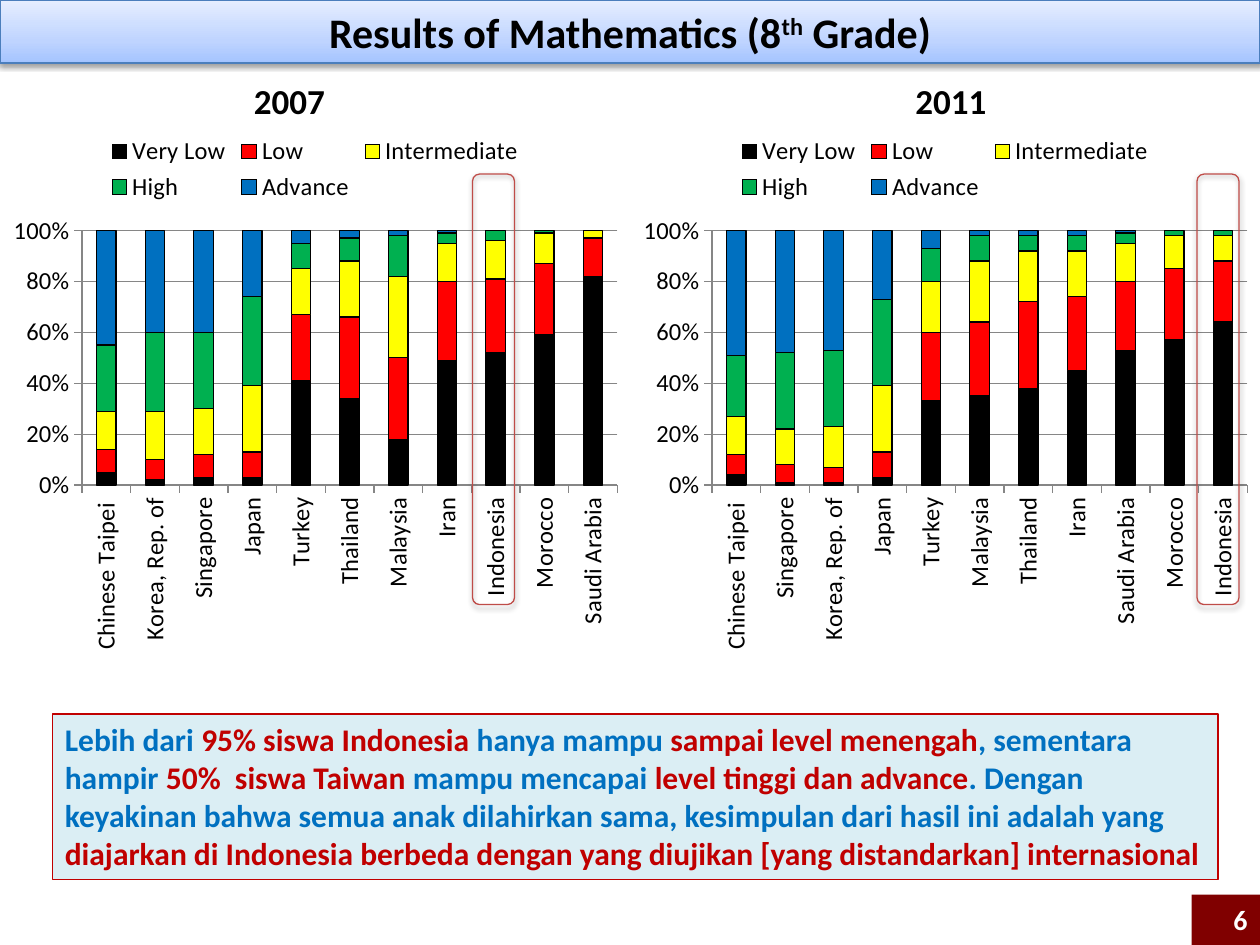
from lxml import etree
from pptx import Presentation
from pptx.chart.data import CategoryChartData
from pptx.dml.color import RGBColor
from pptx.enum.chart import XL_CHART_TYPE as CHART, XL_LEGEND_POSITION as LEGEND, XL_TICK_MARK as TICK
from pptx.enum.shapes import MSO_SHAPE as SHAPE
from pptx.enum.text import MSO_ANCHOR as ANCHOR, PP_ALIGN as ALIGN
from pptx.oxml import parse_xml
from pptx.util import Pt

FONT = "Calibri"
NS = 'xmlns:a="http://schemas.openxmlformats.org/drawingml/2006/main"'
CHART_NS = 'xmlns:c="http://schemas.openxmlformats.org/drawingml/2006/chart"'
COLORS = {
    "black": "000000", "white": "FFFFFF", "grid": "868686",
    "title_line": "4B7EBC", "marker": "BF4C48", "note_fill": "DBEEF4",
    "blue": "0070C0", "red": "C00000", "badge": "800000",
}
TITLE_STOPS = [(0, "A4C4FF"), (35, "BFD4FF"), (100, "E6EEFF")]
LEVELS = {
    "Very Low": "000000", "Low": "FF0000", "Intermediate": "FFFF00",
    "High": "00B050", "Advance": "0070C0",
}
RESULTS_2007 = {
    "Chinese Taipei ": (5, 9, 15, 26, 45),
    "Korea, Rep. of": (2, 8, 19, 31, 40),
    "Singapore": (3, 9, 18, 30, 40),
    "Japan": (3, 10, 26, 35, 26),
    "Turkey": (41, 26, 18, 10, 5),
    "Thailand": (34, 32, 22, 9, 3),
    "Malaysia": (18, 32, 32, 16, 2),
    "Iran": (49, 31, 15, 4, 1),
    "Indonesia": (52, 29, 15, 4, 0),
    "Morocco": (59, 28, 12, 1, 0),
    "Saudi Arabia": (82, 15, 3, 0, 0),
}
RESULTS_2011 = {
    "Chinese Taipei ": (4, 8, 15, 24, 49),
    "Singapore": (1, 7, 14, 30, 48),
    "Korea, Rep. of": (1, 6, 16, 30, 47),
    "Japan": (3, 10, 26, 34, 27),
    "Turkey": (33, 27, 20, 13, 7),
    "Malaysia": (35, 29, 24, 10, 2),
    "Thailand": (38, 34, 20, 6, 2),
    "Iran": (45, 29, 18, 6, 2),
    "Saudi Arabia": (53, 27, 15, 4, 1),
    "Morocco": (57, 28, 13, 2, 0),
    "Indonesia": (64, 24, 10, 2, 0),
}
NOTE = [
    ("Lebih dari ", "blue"), ("95% siswa Indonesia ", "red"),
    ("hanya mampu ", "blue"), ("sampai level menengah", "red"),
    (", sementara hampir ", "blue"), ("50%  siswa Taiwan", "red"),
    (" mampu mencapai ", "blue"), ("level tinggi dan advance", "red"),
    (". Dengan keyakinan bahwa semua anak dilahirkan sama, "
     "kesimpulan dari hasil ini adalah yang ", "blue"),
    ("diajarkan di Indonesia berbeda dengan yang diujikan "
     "[yang distandarkan] internasional", "red"),
]


def rgb(name):
    return RGBColor.from_string(COLORS[name])


def set_font(font, size, color="black", bold=True):
    font.name, font.size, font.bold = FONT, Pt(size), bold
    font.color.rgb = rgb(color)


def set_line(line, color):
    line.color.rgb = rgb(color)
    line.width = Pt(0.75)


def add_box(slide, kind, box, fill=None, line=None):
    sp = slide.shapes.add_shape(kind, *map(Pt, box))
    sp.shadow.inherit = False
    if fill:
        sp.fill.solid()
        sp.fill.fore_color.rgb = rgb(fill)
    else:
        sp.fill.background()
    if line:
        set_line(sp.line, line)
    else:
        sp.line.fill.background()
    return sp


def cast_shadow(sp):
    effects = sp.element.spPr.find("{*}effectLst")
    effects.append(parse_xml(
        f'<a:outerShdw {NS} blurRad="{Pt(3.1)}" dist="{Pt(1.6)}" dir="5400000" rotWithShape="0">'
        f'<a:srgbClr val="{COLORS["black"]}"><a:alpha val="38000"/></a:srgbClr></a:outerShdw>'))


def fill_gradient(sp, stops):
    sp.fill.gradient()
    grad = sp.element.spPr.find("{*}gradFill")
    stop_xml = "".join(
        f'<a:gs pos="{pos * 1000}"><a:srgbClr val="{color}"/></a:gs>' for pos, color in stops)
    new_grad = parse_xml(
        f'<a:gradFill {NS} rotWithShape="1"><a:gsLst>{stop_xml}</a:gsLst>'
        '<a:lin ang="16200000" scaled="0"/></a:gradFill>')
    grad.getparent().replace(grad, new_grad)


def write(sp, runs, size, align=ALIGN.LEFT, anchor=ANCHOR.TOP, wrap=True):
    tf = sp.text_frame
    tf.word_wrap, tf.vertical_anchor = wrap, anchor
    p = tf.paragraphs[0]
    p.alignment = align
    set_font(p.font, size)
    for text, color in runs:
        r = p.add_run()
        r.text = text
        set_font(r.font, size, color)
    return p


def add_title(slide):
    sp = add_box(slide, SHAPE.RECTANGLE, (0, 0, 720, 36), line="title_line")
    fill_gradient(sp, TITLE_STOPS)
    cast_shadow(sp)
    runs = [(text, "black") for text in ("Results of Mathematics (8", "th", " Grade)")]
    p = write(sp, runs, 24, ALIGN.CENTER)
    p.runs[1].font._element.set("baseline", "30000")


def place_plot(chart, x, y, w, h):
    plot_area = chart._chartSpace.chart.plotArea
    for old in plot_area.findall("{*}layout"):
        plot_area.remove(old)
    plot_area.insert(0, etree.fromstring(
        f'<c:layout {CHART_NS}><c:manualLayout><c:layoutTarget val="inner"/>'
        '<c:xMode val="edge"/><c:yMode val="edge"/>'
        f'<c:x val="{x}"/><c:y val="{y}"/><c:w val="{w}"/><c:h val="{h}"/>'
        '</c:manualLayout></c:layout>'))


def add_results_chart(slide, left, results):
    data = CategoryChartData()
    data.categories = list(results)
    for name, values in zip(LEVELS, zip(*results.values())):
        data.add_series(name, values)
    chart = slide.shapes.add_chart(
        CHART.COLUMN_STACKED_100, Pt(left), Pt(69.84), Pt(360), Pt(309.6), data).chart
    set_font(chart.font, 14, bold=False)
    chart.has_title = False
    chart.has_legend = True
    chart.legend.position = LEGEND.TOP
    chart.legend.include_in_layout = False
    plot = chart.plots[0]
    plot.gap_width, plot.overlap, plot.vary_by_categories = 150, 100, False
    for series, color in zip(plot.series, LEVELS.values()):
        series.format.fill.solid()
        series.format.fill.fore_color.rgb = RGBColor.from_string(color)
        set_line(series.format.line, "black")
    for axis in (chart.category_axis, chart.value_axis):
        axis.major_tick_mark = TICK.OUTSIDE
        set_line(axis.format.line, "grid")
        set_font(axis.tick_labels.font, 14, bold=False)
    chart.category_axis._element.txPr.bodyPr.set("rot", "-5400000")
    labels = chart.value_axis.tick_labels
    labels.number_format, labels.number_format_is_linked = "0%", False
    set_line(chart.value_axis.major_gridlines.format.line, "grid")
    place_plot(chart, 0.13, 0.2, 0.85, 0.47)


def add_year(slide, left, year):
    sp = slide.shapes.add_textbox(Pt(left), Pt(41.76), Pt(55.44), Pt(31.5))
    write(sp, [(year, "black")], 20, wrap=False)


def main():
    prs = Presentation()
    prs.slide_width, prs.slide_height = Pt(720), Pt(540)
    slide = prs.slides.add_slide(prs.slide_layouts[6])
    add_results_chart(slide, 360, RESULTS_2011)
    add_results_chart(slide, 0, RESULTS_2007)
    add_title(slide)
    for left in (270, 684):
        cast_shadow(add_box(slide, SHAPE.ROUNDED_RECTANGLE, (left, 99.5, 24, 246), line="marker"))
    add_year(slide, 138, "2007")
    add_year(slide, 516, "2011")
    note = add_box(slide, SHAPE.RECTANGLE, (30, 408, 666, 94.5), "note_fill", "red")
    write(note, NOTE, 18)
    badge = add_box(slide, SHAPE.RECTANGLE, (681, 511.2, 39, 28.8), "badge")
    write(badge, [("6", "white")], 16, ALIGN.RIGHT, ANCHOR.MIDDLE)
    prs.save("out.pptx")


if __name__ == "__main__":
    main()
